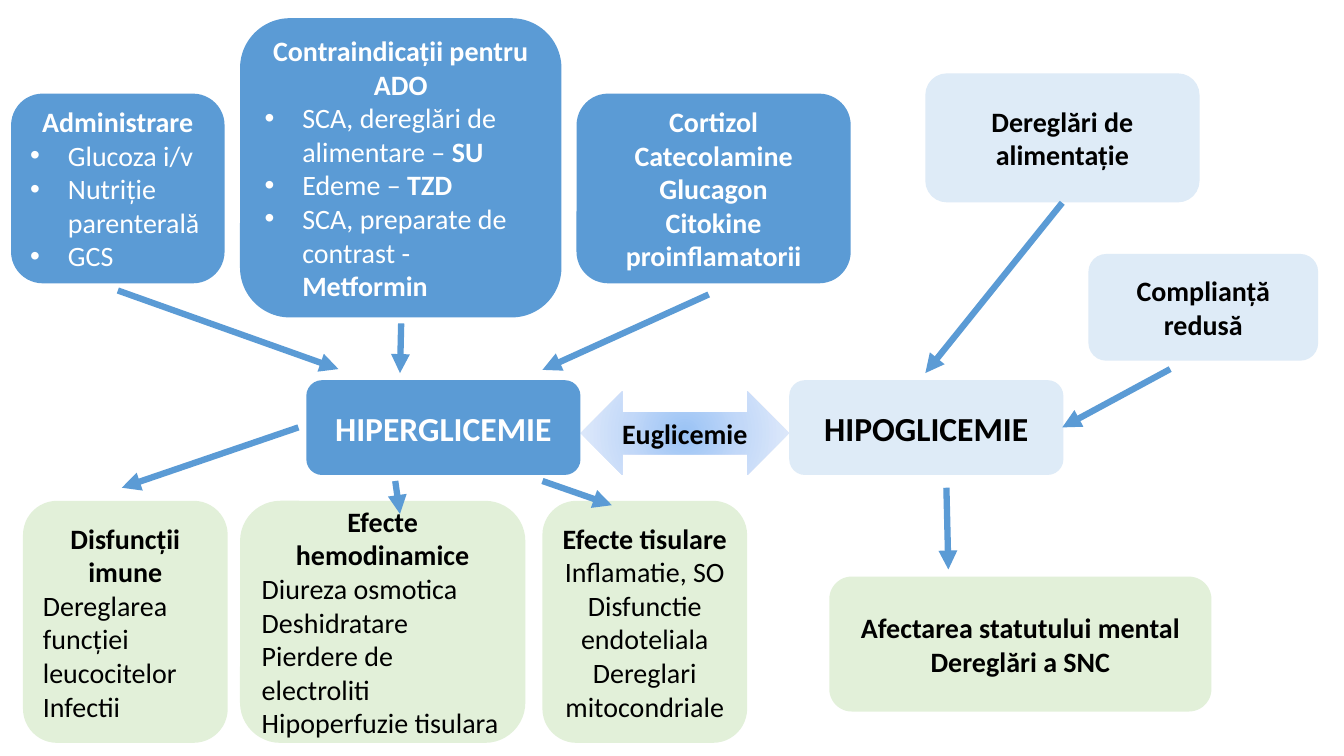
from lxml.etree import SubElement
from pptx import Presentation
from pptx.dml.color import RGBColor
from pptx.enum.shapes import MSO_CONNECTOR, MSO_SHAPE
from pptx.enum.text import MSO_ANCHOR, PP_ALIGN
from pptx.oxml.ns import qn
from pptx.util import Cm, Pt

BLUE, PALE, GREEN = "5B9BD5", "DEEBF7", "E2F0D9"
WHITE, BLACK = "FFFFFF", "000000"


def color(code):
    return RGBColor.from_string(code)


def add_xml(parent, tag, attributes):
    return SubElement(parent, qn(tag), {name: str(value) for name, value in attributes.items()})


def head(text):
    return "head", text, ""


def center(text):
    return "center", text, ""


def left(text):
    return "left", text, ""


def bullet(text, bold_end=""):
    return "bullet", text, bold_end


class Diagram:
    font = "Calibri"
    indent = Cm(0.95)

    def __init__(self, page):
        self.page = page

    def shape(self, kind, place, lines, ink, size=20):
        shape = self.page.shapes.add_shape(kind, *map(Cm, place))
        shape.shadow.inherit = False
        shape.line.fill.background()
        frame = shape.text_frame
        frame.word_wrap = True
        frame.vertical_anchor = MSO_ANCHOR.MIDDLE
        for number, line in enumerate(lines):
            para = frame.add_paragraph() if number else frame.paragraphs[0]
            self.fill_paragraph(para, line, ink, size)
        return shape

    def fill_paragraph(self, para, line, ink, size):
        role, text, bold_end = line
        para.alignment = PP_ALIGN.CENTER if role in ("head", "center") else PP_ALIGN.LEFT
        if role == "bullet":
            properties = para._p.get_or_add_pPr()
            properties.set("marL", str(self.indent))
            properties.set("indent", str(-self.indent))
            add_xml(properties, "a:buFont", {"typeface": "Arial"})
            add_xml(properties, "a:buChar", {"char": "•"})
        font = para.font
        font.name, font.size, font.bold = self.font, Pt(size), role == "head"
        font.color.rgb = color(ink)
        para.add_run().text = text
        if bold_end:
            span = para.add_run()
            span.text = bold_end
            span.font.bold = True

    def box(self, place, fill, lines, size=20):
        ink = WHITE if fill == BLUE else BLACK
        box = self.shape(MSO_SHAPE.ROUNDED_RECTANGLE, place, lines, ink, size)
        box.fill.solid()
        box.fill.fore_color.rgb = color(fill)

    def double_arrow(self, place, lines, stops):
        """Two-headed block arrow with a gradient running out from its centre."""
        arrow = self.shape(MSO_SHAPE.LEFT_RIGHT_ARROW, place, lines, BLACK)
        arrow.fill.gradient()
        gradient = arrow._element.spPr.find(qn("a:gradFill"))
        for child in list(gradient):
            gradient.remove(child)
        stop_list = add_xml(gradient, "a:gsLst", {})
        for percent, code in stops:
            stop = add_xml(stop_list, "a:gs", {"pos": percent * 1000})
            add_xml(stop, "a:srgbClr", {"val": code})
        circle = add_xml(gradient, "a:path", {"path": "circle"})
        add_xml(circle, "a:fillToRect", dict.fromkeys("ltrb", 50000))

    def arrow(self, *ends):
        arrow = self.page.shapes.add_connector(MSO_CONNECTOR.STRAIGHT, *map(Cm, ends))
        arrow.line.width = Pt(4.5)
        arrow.line.color.rgb = color(BLUE)
        add_xml(arrow.line._get_or_add_ln(), "a:tailEnd", {"type": "triangle"})
        add_xml(arrow._element.spPr, "a:effectLst", {})


def draw_states(diagram):
    diagram.double_arrow((14.63, 9.86, 5.26, 2.11), [head("Euglicemie")],
                         [(0, "9AC3F5"), (50, "C2D8F8"), (100, "E1EBFB")])
    diagram.box((7.72, 9.58, 6.91, 2.39), BLUE, [head("HIPERGLICEMIE")], 24)
    diagram.box((19.89, 9.58, 6.91, 2.39), PALE, [head("HIPOGLICEMIE")], 24)


def draw_causes(diagram):
    diagram.box((0.28, 2.36, 5.38, 4.78), BLUE, [
        head("Administrare"), bullet("Glucoza i/v"),
        bullet("Nutriție parenterală"), bullet("GCS")])
    diagram.box((6.05, 0.46, 8.1, 7.54), BLUE, [
        head("Contraindicații pentru ADO"),
        bullet("SCA, dereglări de alimentare – ", "SU"),
        bullet("Edeme – ", "TZD"),
        bullet("SCA, preparate de contrast - ", "Metformin")])
    diagram.box((14.53, 2.36, 6.91, 4.78), BLUE, [
        head("Cortizol"), head("Catecolamine"), head("Glucagon"),
        head("Citokine proinflamatorii")])
    diagram.box((23.32, 1.85, 6.91, 3.25), PALE, [head("Dereglări de alimentație")])
    diagram.box((27.43, 6.4, 5.79, 2.69), PALE, [head("Complianță redusă")])


def draw_effects(diagram):
    top, height = 12.62, 6.1
    diagram.box((0.58, top, 5.16, height), GREEN, [
        head("Disfuncții imune"), left("Dereglarea funcției leucocitelor"),
        left("Infectii")])
    diagram.box((6.05, top, 7.19, height), GREEN, [
        head("Efecte hemodinamice"), left("Diureza osmotica"), left("Deshidratare"),
        left("Pierdere de electroliti"), left("Hipoperfuzie tisulara")])
    diagram.box((13.67, top, 5.16, height), GREEN, [
        head("Efecte tisulare"), center("Inflamatie, SO"),
        center("Disfunctie endoteliala"), center("Dereglari mitocondriale")])
    diagram.box((20.9, 14.53, 9.63, 3.4), GREEN, [
        head("Afectarea statutului mental"), head("Dereglări a SNC")])


def draw_arrows(diagram):
    for ends in [
        (2.97, 7.32, 8.53, 9.3),
        (10.11, 8.15, 10.08, 9.4),
        (17.86, 7.42, 13.67, 9.32),
        (26.77, 5.11, 23.32, 9.4),
        (29.49, 9.3, 26.77, 10.77),
        (7.52, 10.77, 3.07, 12.29),
        (9.96, 12.12, 10.08, 12.95),
        (13.67, 12.12, 15.42, 12.73),
        (23.85, 12.29, 23.9, 14.35),
    ]:
        diagram.arrow(*ends)


def main():
    deck = Presentation()
    deck.slide_width, deck.slide_height = Cm(33.87), Cm(19.05)
    diagram = Diagram(deck.slides.add_slide(deck.slide_layouts[6]))
    draw_states(diagram)
    draw_causes(diagram)
    draw_effects(diagram)
    draw_arrows(diagram)
    deck.save("out.pptx")


if __name__ == "__main__":
    main()
